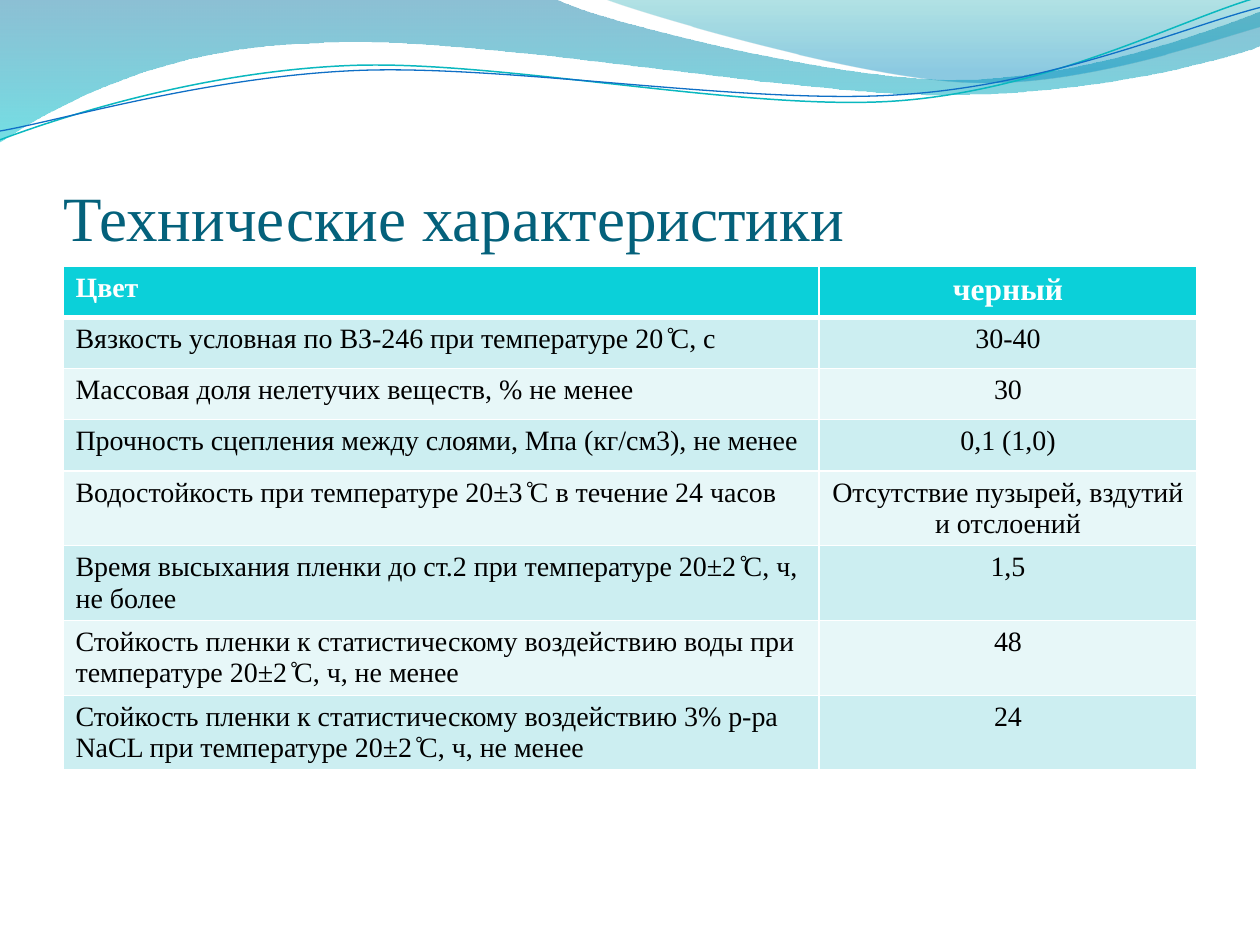
import dataclasses
import math
import typing

import lxml.etree
import pptx
import pptx.dml.color
import pptx.enum.text
import pptx.oxml.ns
import pptx.util

Cm, Pt = pptx.util.Cm, pptx.util.Pt
qn = pptx.oxml.ns.qn

COLOURS = {
    "title": "04617B", "header": "0BD0D9", "band_dark": "CCEEF1", "band_light": "E7F7F8",
    "white": "FFFFFF", "black": "000000", "teal_line": "0AB8BF", "blue_line": "0F6FC6",
    "deep_blue": "0074A1", "aqua": "00C6CF", "sea_green": "00A1A9", "sky_blue": "008BBF",
}
FONT = "Times New Roman"
UNIT = Cm(2.54)  # wave coordinates are in tenths of the page width
TILT = 2.7  # degrees by which the wave lines lean to the left

Point = tuple[float, float]
Segment = tuple[float, ...]  # 2 numbers: line; 6 numbers: Bézier curve


class Stop(typing.NamedTuple):
    position: float
    colour: str
    opacity: int


@dataclasses.dataclass
class Wave:
    start: Point
    segments: list[Segment]
    stops: tuple[Stop, ...] = ()
    line_colour: str = ""
    line_width: float = 0
    pivot: Point = (0, 0)


class Row(typing.NamedTuple):
    label: str
    value: str


WAVES = [
    Wave((0, 0), [
        (4.4, -0.01), (4.76, 0.17, 6.64, 0.63, 7.58, 0.63), (8.53, 0.63, 9.58, 0.26, 10, 0.09),
        (10.01, 0.36), (9.83, 0.44, 8.7, 0.76, 7.46, 0.75), (6.22, 0.75, 3.82, 0.28, 2.57, 0.34),
        (1.29, 0.36, 0.46, 0.83, -0.01, 1.13),
    ], stops=(Stop(0, "deep_blue", 45), Stop(1, "aqua", 55))),
    Wave((4.79, -0.01), [
        (5.09, 0.11, 6.82, 0.62, 7.69, 0.65), (8.56, 0.69, 9.61, 0.32, 10, 0.21), (10, 0),
    ], stops=(Stop(0, "sea_green", 30), Stop(0.8, "sky_blue", 45))),
    Wave((0, 1.11), [
        (0.48, 0.93, 1.58, 0.57, 2.77, 0.52), (3.95, 0.47, 5.93, 0.89, 7.13, 0.8),
        (8.33, 0.71, 9.38, 0.15, 9.98, -0.02),
    ], line_colour="teal_line", line_width=0.85, pivot=(4.99, 0.57)),
    Wave((0, 1.04), [
        (0.47, 0.96, 1.64, 0.61, 2.83, 0.56), (4.03, 0.51, 5.97, 0.84, 7.17, 0.75),
        (8.36, 0.67, 9.41, 0.21, 10, 0.06),
    ], line_colour="blue_line", line_width=0.75, pivot=(5, 0.59)),
]

ROWS = [
    Row("Цвет", "черный"),
    Row("Вязкость условная по ВЗ-246 при температуре 20 ̊С, с", "30-40"),
    Row("Массовая доля нелетучих веществ, % не менее", "30"),
    Row("Прочность сцепления между слоями, Мпа (кг/см3), не менее", "0,1 (1,0)"),
    Row("Водостойкость при температуре 20±3 ̊С в течение 24 часов",
        "Отсутствие пузырей, вздутий и отслоений"),
    Row("Время высыхания пленки до ст.2 при температуре 20±2 ̊С, ч, не более", "1,5"),
    Row("Стойкость пленки к статистическому воздействию воды при температуре 20±2 ̊С, ч, не менее",
        "48"),
    Row("Стойкость пленки к статистическому воздействию 3% р-ра NaCL при температуре 20±2 ̊С, ч, "
        "не менее", "24"),
]


def rgb(name: str) -> pptx.dml.color.RGBColor:
    return pptx.dml.color.RGBColor.from_string(COLOURS[name])


def level(point: Point, pivot: Point) -> Point:
    """Turn a point clockwise about the pivot, so that the shape's rotation tilts it back."""
    angle = math.radians(TILT)
    dx, dy = point[0] - pivot[0], point[1] - pivot[1]
    return (pivot[0] + dx * math.cos(angle) - dy * math.sin(angle),
            pivot[1] + dx * math.sin(angle) + dy * math.cos(angle))


def bend(shape, segments: list[Segment]) -> None:
    """Join each three lines through control points into one Bézier curve."""
    lines = iter(shape.element.spPr.findall(".//" + qn("a:lnTo")))
    for segment in segments:
        first = next(lines)
        if len(segment) == 2:
            continue
        curve = lxml.etree.Element(qn("a:cubicBezTo"))
        first.addprevious(curve)
        for line in (first, next(lines), next(lines)):
            curve.append(line[0])
            line.getparent().remove(line)


def draw_wave(page, wave: Wave) -> None:
    points = [wave.start]
    for segment in wave.segments:
        points += zip(segment[::2], segment[1::2])
    if not wave.stops:
        points = [level(point, wave.pivot) for point in points]
    start, *others = [(x * UNIT, y * UNIT) for x, y in points]
    builder = page.shapes.build_freeform(*start)
    builder.add_line_segments(others, close=bool(wave.stops))
    shape = builder.convert_to_shape()
    bend(shape, wave.segments)
    shape.shadow.inherit = False
    if not wave.stops:
        shape.rotation = 360 - TILT
        shape.fill.background()
        shape.line.color.rgb = rgb(wave.line_colour)
        shape.line.width = Pt(wave.line_width)
        return
    shape.line.fill.background()
    shape.fill.gradient()
    shape.fill.gradient_angle = 270
    for target, stop in zip(shape.fill.gradient_stops, wave.stops):
        target.position = stop.position
        target.color.rgb = rgb(stop.colour)
    for colour, stop in zip(shape.element.spPr.iter(qn("a:srgbClr")), wave.stops):
        lxml.etree.SubElement(colour, qn("a:alpha"), val=str(stop.opacity * 1000))


def format_title(title) -> None:
    title.left, title.top, title.width, title.height = Cm(1.27), Cm(1.95), Cm(22.86), Cm(3.17)
    frame = title.text_frame
    frame.text = "Технические характеристики"
    frame.margin_left = frame.margin_right = frame.margin_bottom = 0
    frame.margin_top = Cm(0.13)
    frame.auto_size = pptx.enum.text.MSO_AUTO_SIZE.NONE
    frame.vertical_anchor = pptx.enum.text.MSO_ANCHOR.BOTTOM
    para = frame.paragraphs[0]
    para.alignment = pptx.enum.text.PP_ALIGN.LEFT
    para.font.name, para.font.size = FONT, Pt(36)
    para.font.color.rgb = rgb("title")


def set_borders(cell, top: float, bottom: float) -> None:
    properties = cell._tc.get_or_add_tcPr()
    for side, width in {"lnL": 1, "lnR": 1, "lnT": top, "lnB": bottom}.items():
        border = lxml.etree.SubElement(properties, qn(f"a:{side}"), w=str(Pt(width)))
        fill = lxml.etree.SubElement(border, qn("a:solidFill"))
        lxml.etree.SubElement(fill, qn("a:srgbClr"), val=COLOURS["white"])


def format_cell(cell, text: str, row: int, column: int) -> None:
    is_header = row == 0
    set_borders(cell, top=3 if row == 1 else 1, bottom=3 if is_header else 1)
    cell.fill.solid()
    band = "band_dark" if row % 2 else "band_light"
    cell.fill.fore_color.rgb = rgb("header" if is_header else band)
    cell.text = text
    para = cell.text_frame.paragraphs[0]
    if column == 1:
        para.alignment = pptx.enum.text.PP_ALIGN.CENTER
    para.font.name = FONT
    para.font.size = Pt(18 if is_header and column == 1 else 16)
    para.font.bold = is_header
    para.font.color.rgb = rgb("white" if is_header else "black")


def draw_table(page) -> None:
    row_height = Cm(1.03)
    box = page.shapes.add_table(len(ROWS), 2, Cm(1.27), Cm(5.37), Cm(22.86),
                                row_height * len(ROWS))
    table = box.table
    table.columns[0].width, table.columns[1].width = Cm(15.24), Cm(7.62)
    for row, texts in enumerate(ROWS):
        for column, text in enumerate(texts):
            format_cell(table.cell(row, column), text, row, column)
    box.height = Cm(10.57)  # two-line rows grow


def main() -> None:
    deck = pptx.Presentation()
    deck.slide_width, deck.slide_height = Cm(25.4), Cm(19.05)
    page = deck.slides.add_slide(deck.slide_layouts.get_by_name("Title Only"))
    for wave in WAVES:
        draw_wave(page, wave)
    title = page.shapes.title
    title.element.getparent().append(title.element)  # in front of the waves
    format_title(title)
    draw_table(page)
    deck.save("out.pptx")


if __name__ == "__main__":
    main()
